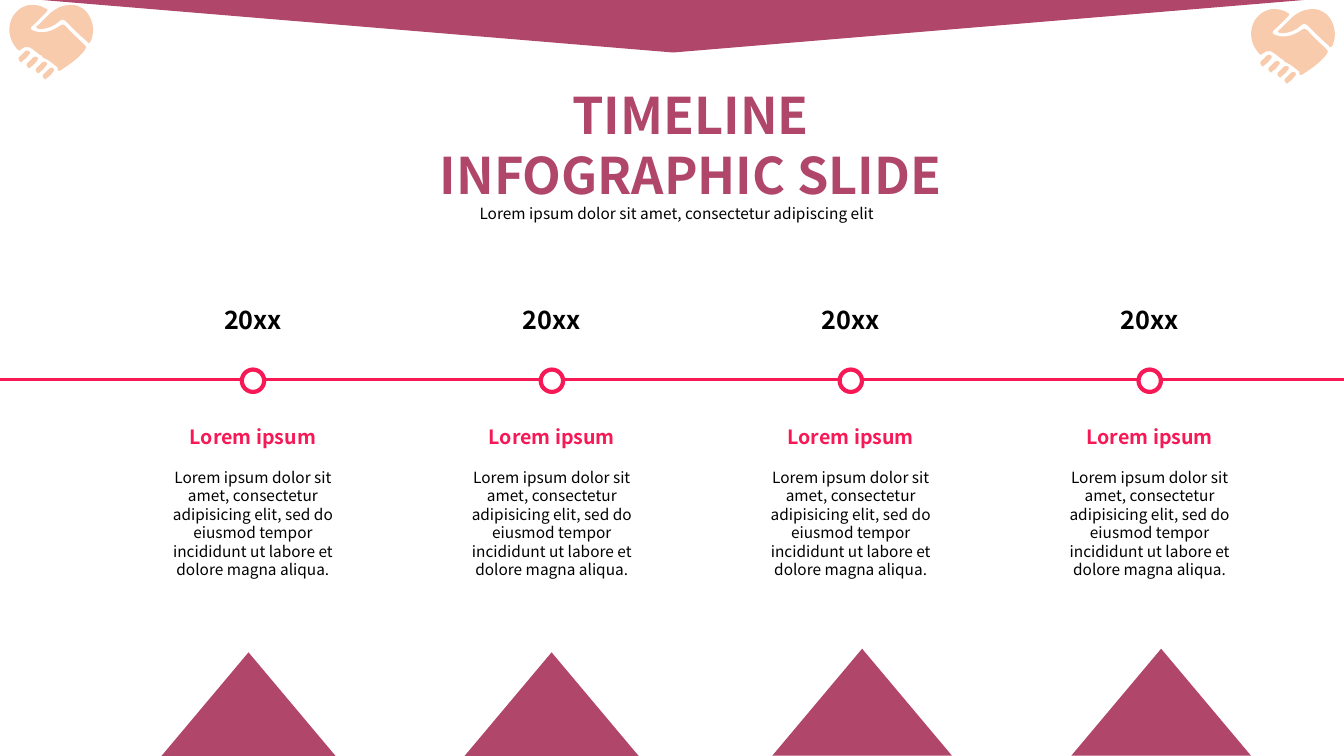
from dataclasses import dataclass

from lxml import etree
from pptx import Presentation
from pptx.dml.color import RGBColor
from pptx.enum import shapes, text
from pptx.oxml import ns
from pptx.util import Pt


@dataclass(frozen=True)
class Theme:
    """Colours, font and type sizes of the slide."""
    plum: str = "B0466A"
    pink: str = "F71856"
    peach: str = "F8CBAD"
    black: str = "000000"
    white: str = "FFFFFF"
    font: str = "Noto Sans CJK SC"
    title: int = 36
    year: int = 18
    heading: int = 14
    body: int = 11
    leading: float = 1.2


T = Theme()
W, H = 960, 540
BODY = ("Lorem ipsum dolor sit amet, consectetur adipisicing elit, sed do "
        "eiusmod tempor incididunt ut labore et dolore magna aliqua.")
MILESTONES = [("20xx", "Lorem ipsum", BODY)] * 4
PEAKS = [(113.4, 466), (329.9, 466), (551.7, 463.4), (765.3, 463.4)]

ICON_UNIT = 0.72
PALM = [(23, 0), (27, 0), (32, 1), (35, 3), (39, 5), (39, 5), (36, 8),
        (32, 12), (28, 16), (24, 20), (20, 23), (21, 25), (25, 26),
        (34, 29), (43, 26), (50, 21), (53, 19), (54, 19), (56, 21),
        (62, 28), (69, 34), (75, 40), (77, 41), (77, 43), (75, 45),
        (69, 53), (60, 59), (51, 65), (50, 66), (49, 66), (48, 64),
        (48, 63), (48, 62), (48, 62), (44, 59), (40, 55), (35, 53),
        (34, 52), (32, 52), (32, 50), (32, 50), (32, 50), (31, 50),
        (27, 47), (24, 44), (20, 42), (17, 41), (14, 42), (12, 44),
        (11, 46), (9, 46), (8, 44), (-1, 34), (-2, 21), (4, 11),
        (9, 4), (15, 0), (23, 0)]
THUMB = [(62, 0), (78, 0), (88, 20), (81, 36), (79, 39), (78, 38), (77, 36),
         (70, 30), (63, 23), (56, 16), (54, 14), (53, 14), (50, 16),
         (45, 21), (38, 24), (30, 24), (29, 23), (28, 24), (27, 23),
         (26, 21), (28, 21), (29, 20), (33, 16), (37, 12), (41, 8),
         (47, 3), (53, 0), (62, 0)]
FINGER = [(3, 12), (2, 11), (1, 11), (1, 10), (0, 9), (0, 8), (1, 7),
          (3, 5), (5, 3), (7, 1), (8, 0), (10, 0), (11, 1),
          (12, 2), (12, 3), (11, 4), (9, 7), (7, 9), (4, 11),
          (4, 11), (4, 11), (3, 12)]
FINGER_SPOTS = [(33, 62), (26, 56), (17, 51), (9, 45)]


def rgb(color):
    """Turn a hex string into a colour."""
    return RGBColor.from_string(color)


def paint(sp, fill, line=None, width=0):
    """Set the fill and outline of a shape and drop its shadow."""
    sp.shadow.inherit = False
    sp.fill.solid()
    sp.fill.fore_color.rgb = rgb(fill)
    if line:
        sp.line.color.rgb = rgb(line)
        sp.line.width = Pt(width)
    else:
        sp.line.fill.background()


def add_preset(s, kind, x, y, w, h, fill, line=None, width=0):
    """Add a painted preset shape."""
    sp = s.shapes.add_shape(kind, Pt(x), Pt(y), Pt(w), Pt(h))
    paint(sp, fill, line, width)
    return sp


def add_text(s, x, y, w, h, words, size=T.body, color=T.black, bold=False):
    """Add a centred, wrapping text box."""
    tf = s.shapes.add_textbox(Pt(x), Pt(y), Pt(w), Pt(h)).text_frame
    tf.word_wrap = True
    tf.auto_size = text.MSO_AUTO_SIZE.SHAPE_TO_FIT_TEXT
    p = tf.paragraphs[0]
    p.alignment = text.PP_ALIGN.CENTER
    p.line_spacing = Pt(size * T.leading)
    r = p.add_run()
    r.text = words
    r.font.name = T.font
    r.font.size = Pt(size)
    r.font.bold = bold
    r.font.color.rgb = rgb(color)


def curve_outline(sp):
    """Turn each three straight segments of a freeform into one cubic curve."""
    segments = list(sp._element.iter(ns.qn("a:lnTo")))
    for i in range(0, len(segments), 3):
        cubic = etree.Element(ns.qn("a:cubicBezTo"))
        segments[i].addprevious(cubic)
        for segment in segments[i:i + 3]:
            cubic.append(segment[0])
            segment.getparent().remove(segment)


def add_handshake(s, x, y):
    """Draw the heart-shaped handshake with its corner at x, y."""
    group = s.shapes.add_group_shape()
    fingers = [[(fx + dx, fy + dy) for fx, fy in FINGER] for dx, dy in FINGER_SPOTS]
    for curve in [PALM, THUMB, *fingers]:
        points = [(Pt(x + ICON_UNIT * px), Pt(y + ICON_UNIT * py)) for px, py in curve]
        outline = group.shapes.build_freeform(*points[0])
        outline.add_line_segments(points[1:], close=True)
        sp = outline.convert_to_shape()
        curve_outline(sp)
        paint(sp, T.peach)


def add_axis(s, x, y, w):
    """Draw the horizontal timeline."""
    line = s.shapes.add_connector(shapes.MSO_CONNECTOR.STRAIGHT,
                                  Pt(x), Pt(y), Pt(x + w), Pt(y))
    line.line.color.rgb = rgb(T.pink)
    line.line.width = Pt(2.25)
    etree.SubElement(line._element.spPr, ns.qn("a:effectLst"))


def add_milestone(s, x, y, w, year, heading, body):
    """Place a year, marker, heading and body in one column."""
    d = 16
    add_preset(s, shapes.MSO_SHAPE.OVAL, x + (w - d) / 2, y + 50, d, d,
               T.white, T.pink, 3)
    add_text(s, x, y + 116.5, w, 87, body)
    add_text(s, x, y + 86, w, 24.5, heading, size=T.heading, color=T.pink, bold=True)
    add_text(s, x, y, w, 29, year, size=T.year, bold=True)


def add_header(s, x, y, w):
    """Place the title and subtitle."""
    add_text(s, x + 25, y + 86.2, 304.5, 21,
             "Lorem ipsum dolor sit amet, consectetur adipiscing elit")
    add_text(s, x, y, w, 94.3, "TIMELINE INFOGRAPHIC SLIDE",
             size=T.title, color=T.plum, bold=True)


def add_timeline_slide(prs):
    """Build the timeline slide."""
    s = prs.slides.add_slide(prs.slide_layouts[6])
    triangle = shapes.MSO_SHAPE.ISOSCELES_TRIANGLE
    add_preset(s, triangle, -6, -3, 973.5, 40.5, T.plum).rotation = 180
    add_axis(s, 0, 271, W)
    for i, milestone in enumerate(MILESTONES):
        add_milestone(s, 108.5 + 213.5 * i, 214, 144.5, *milestone)
    add_header(s, 306.3, 56.3, 373.8)
    add_handshake(s, 893.5, 6.5)
    add_handshake(s, 6.5, 3.5)
    for x, y in PEAKS:
        add_preset(s, triangle, x, y, 128.2, 76.3, T.plum)


def main():
    """Create the deck and save it."""
    prs = Presentation()
    prs.slide_width, prs.slide_height = Pt(W), Pt(H)
    add_timeline_slide(prs)
    prs.save("out.pptx")


if __name__ == "__main__":
    main()
